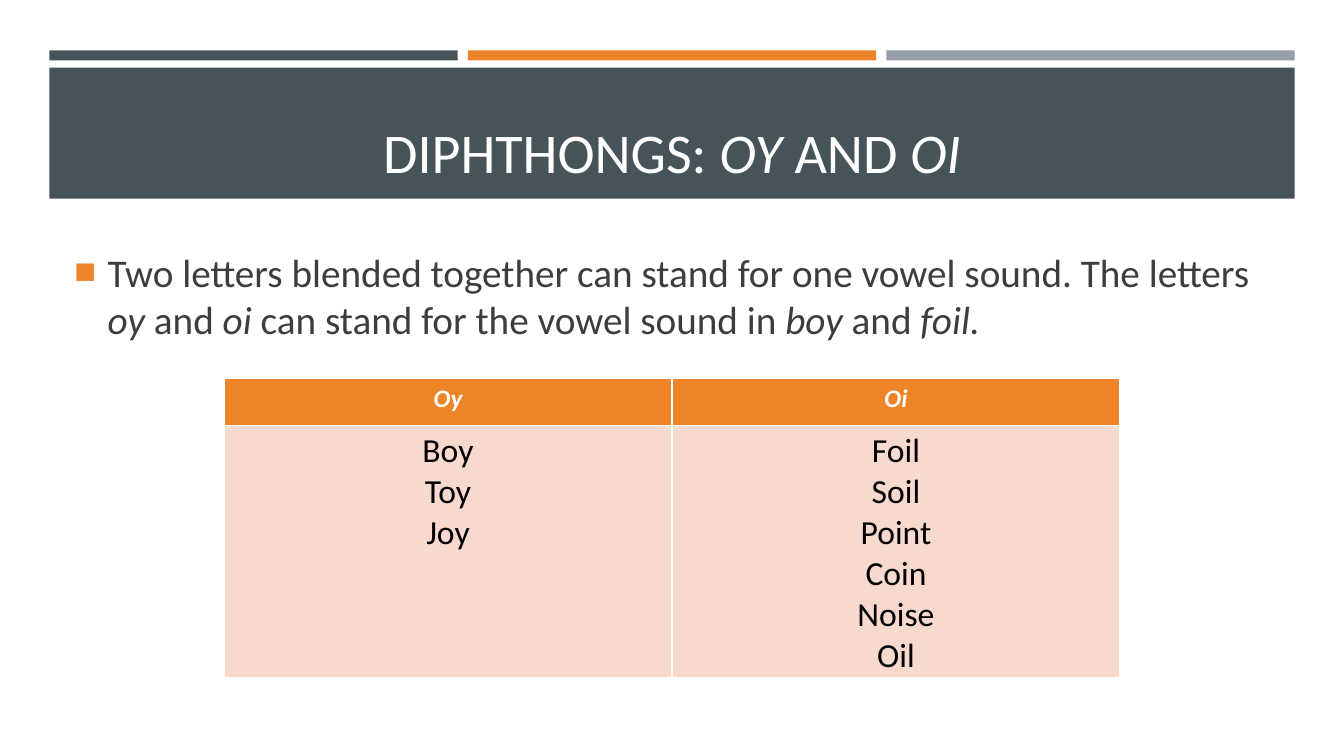
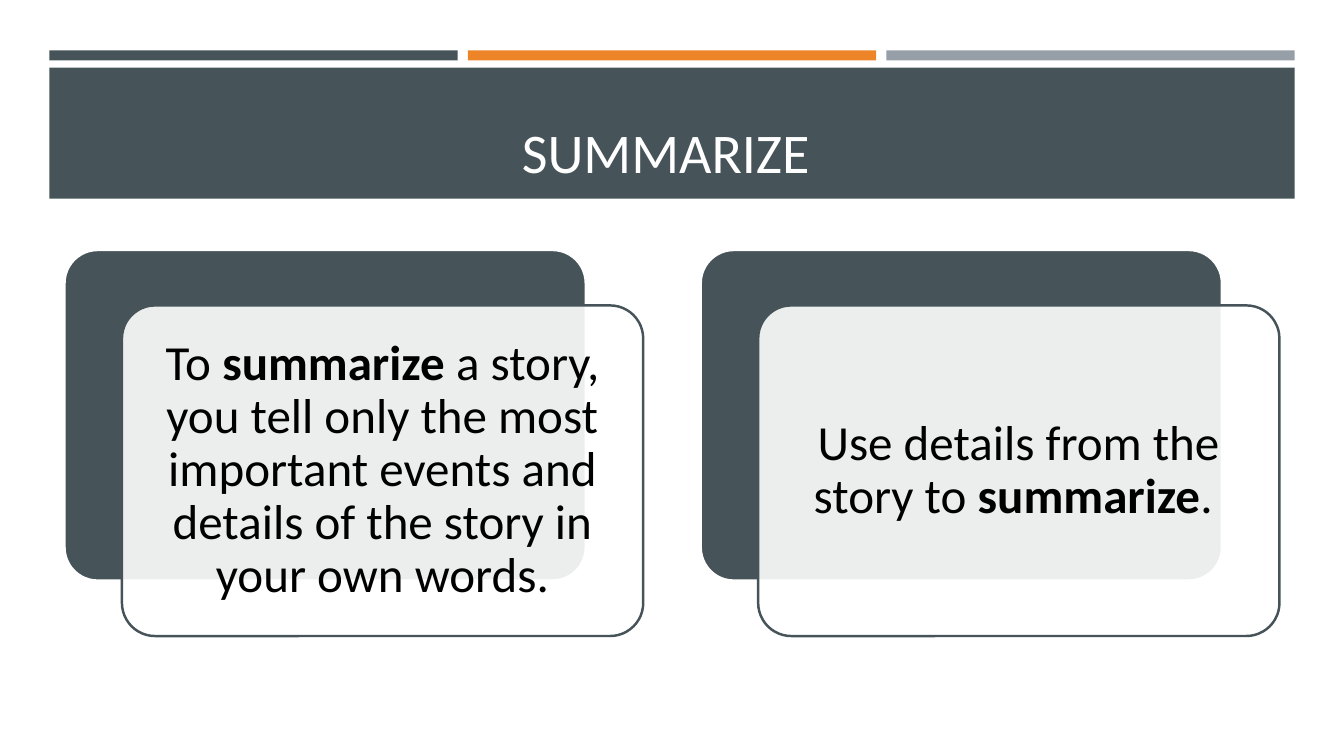
from lxml.etree import SubElement
from pptx import Presentation
from pptx.dml.color import RGBColor
from pptx.enum.shapes import MSO_SHAPE
from pptx.enum.text import MSO_ANCHOR, PP_ALIGN
from pptx.oxml.ns import qn
from pptx.util import Inches, Pt

SLATE, ORANGE, GREY, WHITE = "465359", "ED8428", "969FA7", "FFFFFF"
PEACH, CHARCOAL, BLACK = "F8D9CD", "3D3D3D", "000000"
FONT = "Calibri"

PAGE_WIDTH, PAGE_HEIGHT = 13.33, 7.5
EDGE, STRIPE_GAP = 0.49, 0.1
BAND_WIDTH = PAGE_WIDTH - 2 * EDGE
MARGIN = 0.64
BODY_WIDTH = PAGE_WIDTH - 2 * MARGIN
CARD_WIDTH, CARD_HEIGHT = 5.17, 3.28
CARD_SHIFT_X, CARD_SHIFT_Y = 0.57, 0.55


def color(hex_code):
    return RGBColor.from_string(hex_code)


def write(frame, text, size, ink, emphasis="italic", align=PP_ALIGN.LEFT,
          bold=None, italic=None, line_spacing=None):
    """Write one paragraph per line; words between asterisks get the emphasis."""
    frame.word_wrap = True
    for number, line in enumerate(text.split("\n")):
        para = frame.add_paragraph() if number else frame.paragraphs[0]
        para.alignment = align
        para.line_spacing = line_spacing
        for index, piece in enumerate(line.split("*")):
            if not piece:
                continue
            span = para.add_run()
            span.text = piece
            font = span.font
            font.name, font.size = FONT, Pt(size)
            font.color.rgb = color(ink)
            font.bold, font.italic = bold, italic
            if index % 2:
                setattr(font, emphasis, True)


def add_text(page, place, text, size, ink, anchor=MSO_ANCHOR.TOP, **style):
    frame = page.shapes.add_textbox(*map(Inches, place)).text_frame
    frame.vertical_anchor = anchor
    write(frame, text, size, ink, **style)
    return frame


def add_block(page, place, fill, line=None, kind=MSO_SHAPE.RECTANGLE):
    block = page.shapes.add_shape(kind, *map(Inches, place))
    block.shadow.inherit = False
    block.fill.solid()
    block.fill.fore_color.rgb = color(fill)
    if line:
        block.line.color.rgb = color(line)
        block.line.width = Pt(1.75)
    else:
        block.line.fill.background()
    return block


def set_bullet(para, hex_code, indent):
    props = para._p.get_or_add_pPr()
    props.set("marL", str(Inches(indent)))
    props.set("indent", str(-Inches(indent)))
    SubElement(SubElement(props, qn("a:buClr")), qn("a:srgbClr"), val=hex_code)
    SubElement(props, qn("a:buSzPct"), val="92000")
    SubElement(props, qn("a:buFont"), typeface="Arial")
    SubElement(props, qn("a:buChar"), char="■")


def set_opacity(block, percent):
    fill = block.fill._xPr.find(qn("a:solidFill"))
    SubElement(fill[0], qn("a:alpha"), val=str(percent * 1000))


def add_page(deck, title):
    """Add a blank slide with the three stripes and the title band."""
    page = deck.slides.add_slide(deck.slide_layouts[6])
    stripe_width = (BAND_WIDTH - 2 * STRIPE_GAP) / 3
    for column, fill in enumerate((SLATE, ORANGE, GREY)):
        left = EDGE + column * (stripe_width + STRIPE_GAP)
        add_block(page, (left, 0.5, stripe_width, 0.1), fill)
    add_block(page, (EDGE, 0.67, BAND_WIDTH, 1.3), SLATE)
    add_text(page, (MARGIN, 0.77, BODY_WIDTH, 1.11), title, 40, WHITE,
             anchor=MSO_ANCHOR.BOTTOM, align=PP_ALIGN.CENTER)
    return page


def add_word_table(page, headings, word_lists):
    width = PAGE_WIDTH * 2 / 3
    place = ((PAGE_WIDTH - width) / 2, 3.75, width, 2.97)
    table = page.shapes.add_table(2, len(headings), *map(Inches, place)).table
    table.horz_banding = False
    table.rows[0].height, table.rows[1].height = Inches(0.47), Inches(2.5)
    rows = (
        (headings, ORANGE, dict(size=18, ink=WHITE, bold=True, italic=True)),
        (word_lists, PEACH, dict(size=24, ink=BLACK)),
    )
    for row, (texts, fill, style) in enumerate(rows):
        for column, text in enumerate(texts):
            cell = table.cell(row, column)
            cell.fill.solid()
            cell.fill.fore_color.rgb = color(fill)
            write(cell.text_frame, text, align=PP_ALIGN.CENTER, **style)


def add_card(page, left, top, text):
    """Add a dark card with a translucent text card shifted over it."""
    for shift, fill, line in ((0, SLATE, WHITE), (1, WHITE, SLATE)):
        place = (left + shift * CARD_SHIFT_X, top + shift * CARD_SHIFT_Y,
                 CARD_WIDTH, CARD_HEIGHT)
        card = add_block(page, place, fill, line, MSO_SHAPE.ROUNDED_RECTANGLE)
        card.adjustments[0] = 0.1
    set_opacity(card, 90)
    frame = card.text_frame
    frame.vertical_anchor = MSO_ANCHOR.MIDDLE
    # The rounded corners already inset the text by about 0.1 inch.
    frame.margin_left = frame.margin_right = Inches(0.15)
    frame.margin_top = frame.margin_bottom = Inches(0.15)
    write(frame, text, 35, BLACK, emphasis="bold", align=PP_ALIGN.CENTER,
          line_spacing=0.9)


def build_diphthongs(deck):
    page = add_page(deck, "DIPHTHONGS: *OY* AND *OI*")
    frame = add_text(
        page, (MARGIN, 2.41, BODY_WIDTH, 1.05),
        "Two letters blended together can stand for one vowel sound. The letters"
        "* oy *and *oi* can stand for the vowel sound in *boy* and *foil.*",
        28, CHARCOAL)
    set_bullet(frame.paragraphs[0], ORANGE, 0.33)
    add_word_table(page, ("Oy", "Oi"),
                   ("Boy\nToy\nJoy", "Foil\nSoil\nPoint\nCoin\nNoise\nOil"))


def build_summarize(deck):
    page = add_page(deck, "SUMMARIZE ")
    texts = (
        "To *summarize* a story, you tell only the most important events and "
        "details of the story in your own words.",
        "Use details from the story to *summarize*. ",
    )
    step = BODY_WIDTH - CARD_WIDTH - CARD_SHIFT_X
    for column, text in enumerate(texts):
        add_card(page, MARGIN + column * step, 2.48, text)


def main():
    deck = Presentation()
    deck.slide_width, deck.slide_height = Inches(PAGE_WIDTH), Inches(PAGE_HEIGHT)
    build_diphthongs(deck)
    build_summarize(deck)
    deck.save("out.pptx")


if __name__ == "__main__":
    main()
